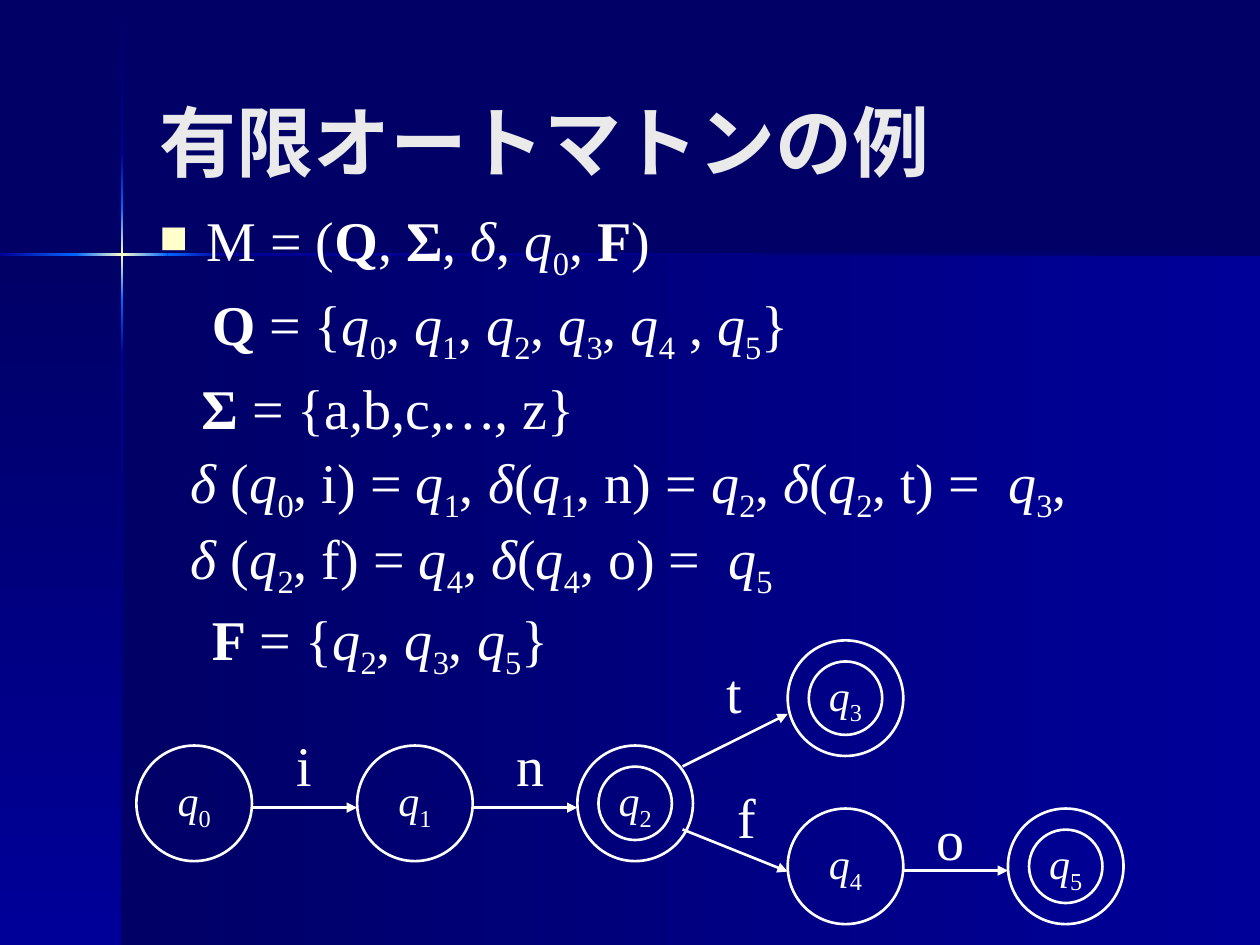
from dataclasses import dataclass
from itertools import groupby

from lxml import etree
from pptx import Presentation
from pptx.dml.color import RGBColor
from pptx.enum.shapes import MSO_CONNECTOR, MSO_SHAPE
from pptx.enum.text import MSO_ANCHOR, PP_ALIGN
from pptx.oxml.ns import qn
from pptx.util import Cm, Pt

RECTANGLE = MSO_SHAPE.RECTANGLE
OVAL = MSO_SHAPE.OVAL
STRAIGHT = MSO_CONNECTOR.STRAIGHT
MIDDLE = MSO_ANCHOR.MIDDLE
TOP = MSO_ANCHOR.TOP
LEFT = PP_ALIGN.LEFT
CENTER = PP_ALIGN.CENTER


@dataclass(frozen=True)
class Theme:
    font: str = "Times New Roman"
    night: str = "000066"
    blue: str = "000099"
    bright: str = "0066FF"
    cream: str = "FFFFCC"
    white: str = "FFFFFF"
    title: str = "EAEAEA"
    title_size: int = 44
    body_size: int = 32
    state_size: int = 24
    line_width: float = 1.5


THEME = Theme()
STATE_SIZE = 2.33
INNER_SIZE = 1.48

# Left and top in cm, and whether the state accepts
STATES = {
    "q0": (2.75, 15.03, False),
    "q1": (7.2, 15.03, False),
    "q2": (11.64, 15.03, True),
    "q3": (15.88, 12.91, True),
    "q4": (15.88, 16.3, False),
    "q5": (20.32, 16.3, True),
}

# Symbol, arrow start, arrow end, and left, top and width of the label
TRANSITIONS = [
    ("i", (5.08, 16.28), (7.2, 16.28), (5.72, 14.61, 0.81)),
    ("n", (9.53, 16.28), (11.64, 16.28), (10.16, 14.61, 1.07)),
    ("t", (13.76, 15.45), (15.88, 14.39), (14.39, 13.13, 0.81)),
    ("f", (13.76, 16.72), (15.88, 17.57), (14.61, 15.66, 0.89)),
    ("o", (18.21, 17.55), (20.32, 17.55), (18.63, 16.09, 1.07)),
]

# Left, top, width and lines of each definition below the first one
DEFINITIONS = [
    (4.02, 5.72, 13.13, ["Q = {q0, q1, q2, q3, q4 , q5}"]),
    (3.6, 8.89, 20.11, ["δ (q0, i) = q1, δ(q1, n) = q2, δ(q2, t) =  q3,",
                        "δ (q2, f) = q4, δ(q4, o) =  q5"]),
    (4.02, 12.07, 12.27, ["F = {q2, q3, q5}"]),
]


def add_gradient(slide, left, top, width, height, colors, vertical=False):
    shape = slide.shapes.add_shape(RECTANGLE, Cm(left), Cm(top), Cm(width), Cm(height))
    shape.shadow.inherit = False
    shape.line.fill.background()
    shape.fill.gradient()
    shape.fill.gradient_angle = 270 if vertical else 0
    stops = shape.element.spPr.find(".//" + qn("a:gsLst"))
    for stop in list(stops):
        stops.remove(stop)
    for index, color in enumerate(colors):
        position = round(100000 * index / (len(colors) - 1))
        stop = etree.SubElement(stops, qn("a:gs"), pos=str(position))
        etree.SubElement(stop, qn("a:srgbClr"), val=color)


def add_background(slide):
    """Draw the two panels and the cross of light where they meet."""
    slide.background.fill.solid()
    slide.background.fill.fore_color.rgb = RGBColor.from_string(THEME.night)
    night, blue, bright, cream = THEME.night, THEME.blue, THEME.bright, THEME.cream
    add_gradient(slide, 2.46, 5.13, 22.94, 13.92, [night, blue])
    add_gradient(slide, 0, 5.13, 2.46, 13.92, [night, blue], vertical=True)
    glow = [bright, cream, bright]
    column = [(0.03, 3.07, [night, blue]), (3.07, 4.19, [blue, bright]), (4.19, 6.05, glow),
              (6.05, 7.16, [bright, blue]), (7.16, 19.05, [blue, night])]
    row = [(0, 1.53, [blue, bright]), (1.53, 3.38, glow),
           (3.38, 4.5, [bright, blue]), (4.5, 25.4, [blue, night])]
    for start, end, colors in column:
        add_gradient(slide, 2.44, start, 0.05, end - start, colors, vertical=True)
    for start, end, colors in row:
        add_gradient(slide, start, 5.11, end - start, 0.05, colors)


def write_text(frame, lines, size=THEME.body_size, color=THEME.white, bold=False,
               align=LEFT, anchor=TOP, wrap=True, italics="qδ"):
    """Write formulas: set names bold, the given letters italic, digits as subscripts."""
    def kind(character):
        if character in "QΣF":
            return "bold"
        if character in italics:
            return "italic"
        return "subscript" if character.isdigit() else "plain"

    frame.word_wrap = wrap
    frame.vertical_anchor = anchor
    for index, line in enumerate(lines):
        paragraph = frame.add_paragraph() if index else frame.paragraphs[0]
        paragraph.alignment = align
        for style, characters in groupby(line, kind):
            run = paragraph.add_run()
            run.text = "".join(characters)
            run.font.name = THEME.font
            run.font.size = Pt(size)
            run.font.color.rgb = RGBColor.from_string(color)
            run.font.bold = bold or style == "bold"
            run.font.italic = style == "italic"
            if style == "subscript":
                run.font._element.set("baseline", "-25000")


def add_text(slide, left, top, width, height, lines, **text_format):
    box = slide.shapes.add_textbox(Cm(left), Cm(top), Cm(width), Cm(height))
    write_text(box.text_frame, lines, **text_format)
    return box


def add_bullet(paragraph):
    properties = paragraph._p.get_or_add_pPr()
    properties.set("marL", str(Cm(0.95)))
    properties.set("indent", str(-Cm(0.95)))
    bullet_color = etree.SubElement(properties, qn("a:buClr"))
    etree.SubElement(bullet_color, qn("a:srgbClr"), val=THEME.cream)
    etree.SubElement(properties, qn("a:buSzPct"), val="70000")
    etree.SubElement(properties, qn("a:buChar"), char="■")


def set_line(line):
    line.color.rgb = RGBColor.from_string(THEME.white)
    line.width = Pt(THEME.line_width)


def add_circle(slide, left, top, size):
    circle = slide.shapes.add_shape(OVAL, Cm(left), Cm(top), Cm(size), Cm(size))
    circle.shadow.inherit = False
    circle.fill.background()
    set_line(circle.line)
    return circle


def add_state(slide, name, left, top, accepting):
    if accepting:
        inset = (STATE_SIZE - INNER_SIZE) / 2
        add_circle(slide, left + inset, top + inset, INNER_SIZE)
    circle = add_circle(slide, left, top, STATE_SIZE)
    write_text(circle.text_frame, [name], size=THEME.state_size,
               align=CENTER, anchor=MIDDLE, wrap=False)


def add_transition(slide, symbol, start, end, label):
    arrow = slide.shapes.add_connector(STRAIGHT, *(Cm(value) for value in start + end))
    set_line(arrow.line)
    etree.SubElement(arrow.line._get_or_add_ln(), qn("a:tailEnd"), type="triangle")
    etree.SubElement(arrow._element.spPr, qn("a:effectLst"))
    left, top, width = label
    add_text(slide, left, top, width, 1.6, [symbol], wrap=False)


def main():
    presentation = Presentation()
    presentation.slide_width = Cm(25.4)
    presentation.slide_height = Cm(19.05)
    slide = presentation.slides.add_slide(presentation.slide_layouts[6])
    add_background(slide)
    add_text(slide, 2.96, 0.85, 20.96, 3.98, ["有限オートマトンの例"], size=THEME.title_size,
             color=THEME.title, bold=True, anchor=MIDDLE)
    for name, (left, top, accepting) in STATES.items():
        add_state(slide, name, left, top, accepting)
    for transition in TRANSITIONS:
        add_transition(slide, *transition)
    for left, top, width, lines in DEFINITIONS:
        add_text(slide, left, top, width, 1.6 * len(lines), lines)
    add_text(slide, 3.81, 7.41, 12.27, 1.6, ["Σ = {a,b,c,…, z}"], italics=",…")
    machine = add_text(slide, 2.96, 4.02, 20.96, 1.7, ["M = (Q, Σ, δ, q0, F)"])
    add_bullet(machine.text_frame.paragraphs[0])
    presentation.save("out.pptx")


if __name__ == "__main__":
    main()
